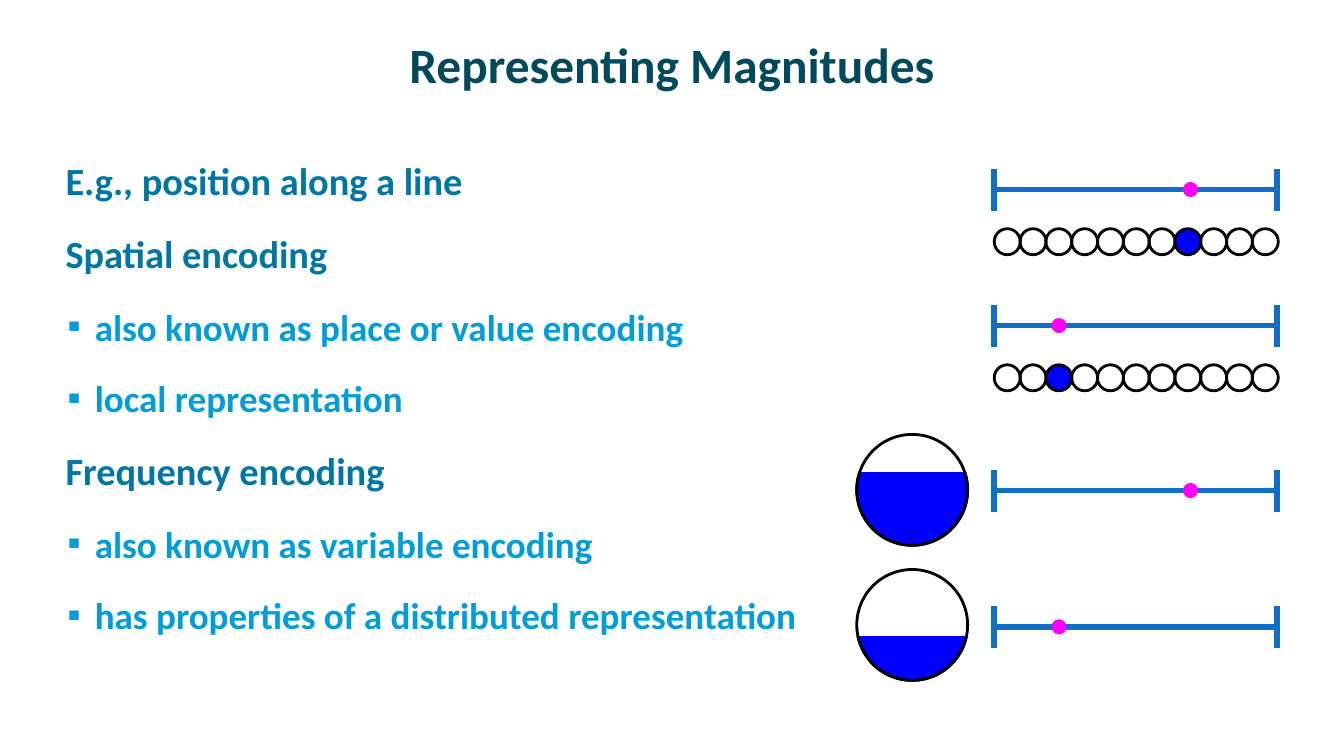
"""Build the slide on spatial and frequency encoding of magnitudes."""
from dataclasses import dataclass
from typing import Optional

from lxml import etree
from pptx import Presentation
from pptx.dml.color import RGBColor
from pptx.enum.shapes import MSO_CONNECTOR, MSO_SHAPE
from pptx.enum.text import MSO_ANCHOR, MSO_AUTO_SIZE, PP_ALIGN
from pptx.oxml.ns import qn
from pptx.util import Pt

OVAL, RECT = MSO_SHAPE.OVAL, MSO_SHAPE.RECTANGLE
STRAIGHT = MSO_CONNECTOR.STRAIGHT
MIDDLE, TOP = MSO_ANCHOR.MIDDLE, MSO_ANCHOR.TOP
CENTER, LEFT = PP_ALIGN.CENTER, PP_ALIGN.LEFT
NO_FIT = MSO_AUTO_SIZE.NONE

NAVY = RGBColor(0x03, 0x49, 0x5C)
TEAL = RGBColor(0x00, 0x76, 0xA3)
SKY = RGBColor(0x00, 0x9D, 0xD9)
AXIS = RGBColor(0x0F, 0x6F, 0xC6)
BLUE = RGBColor(0x00, 0x00, 0xFF)
PINK = RGBColor(0xFF, 0x00, 0xFF)
BLACK = RGBColor(0x00, 0x00, 0x00)
WHITE = RGBColor(0xFF, 0xFF, 0xFF)

FONT = "Calibri"
SCALE_X, SCALE_W, TICK, DOT = 710.2, 202, 15, 8.8
CELLS, CELL, PITCH, DROP = 11, 18.6, 18.43, 28
GAUGE_X, GAUGE, RISE = 612, 79.2, 3


@dataclass
class Item:
    """One line of the list."""
    text: str
    level: int = 0


@dataclass
class Scale:
    """A marked line, with an optional chain of cells below."""
    y: float
    mark: float
    lit: Optional[int] = None


@dataclass
class Gauge:
    """A round gauge filled up to a level."""
    top: float
    level: float


ITEMS = [
    Item("E.g., position along a line"),
    Item("Spatial encoding"),
    Item("also known as place or value encoding", 1),
    Item("local representation", 1),
    Item("Frequency encoding"),
    Item("also known as variable encoding", 1),
    Item("has properties of a distributed representation", 1),
]
SCALES = [Scale(135.4, 140.2, 7), Scale(232.6, 46.3, 2),
          Scale(350.4, 140.2), Scale(447.8, 46.3)]
GAUGES = [Gauge(310.3, 336.2), Gauge(406.8, 453.6)]


def place(holder, x: float, y: float, w: float, h: float, anchor) -> None:
    """Move a placeholder and set its frame."""
    holder.left, holder.top = Pt(x), Pt(y)
    holder.width, holder.height = Pt(w), Pt(h)
    frame = holder.text_frame
    frame.auto_size, frame.word_wrap = NO_FIT, True
    frame.vertical_anchor = anchor
    frame.margin_left = frame.margin_right = Pt(7.9)
    frame.margin_top = frame.margin_bottom = Pt(4.3)


def write(para, text: str, *, size: float, color: RGBColor, align=LEFT,
          before: float = 0, margin: float = 0, indent: float = 0,
          bullet: str = "") -> None:
    """Put formatted text into a paragraph."""
    run = para.add_run()
    run.text = text
    run.font.name, run.font.size, run.font.bold = FONT, Pt(size), True
    run.font.color.rgb = color
    para.alignment, para.space_before = align, Pt(before)
    props = para._p.get_or_add_pPr()
    props.set("marL", str(Pt(margin)))
    props.set("indent", str(Pt(indent)))
    if bullet:
        etree.SubElement(props, qn("a:buFont"), typeface=FONT)
        etree.SubElement(props, qn("a:buChar"), char=bullet)
    else:
        etree.SubElement(props, qn("a:buNone"))


def draw(shapes, kind, x: float, y: float, w: float, h: float,
         line: RGBColor, fill: Optional[RGBColor] = None) -> None:
    """Draw a preset shape, hollow unless a fill is given."""
    shape = shapes.add_shape(kind, Pt(x), Pt(y), Pt(w), Pt(h))
    shape.shadow.inherit = False
    shape.line.color.rgb, shape.line.width = line, Pt(2)
    if fill is None:
        shape.fill.background()
    else:
        shape.fill.solid()
        shape.fill.fore_color.rgb = fill


def rule(shapes, x1: float, y1: float, x2: float, y2: float) -> None:
    """Draw one straight stroke of a scale."""
    line = shapes.add_connector(STRAIGHT, Pt(x1), Pt(y1), Pt(x2), Pt(y2))
    line.line.color.rgb, line.line.width = AXIS, Pt(4)
    etree.SubElement(line._element.spPr, qn("a:effectLst"))


def draw_scale(slide, scale: Scale) -> None:
    """Draw the axis, its end ticks, its dot and its chain."""
    parts = slide.shapes.add_group_shape().shapes
    end = SCALE_X + SCALE_W
    rule(parts, SCALE_X, scale.y, end, scale.y)
    for x in (SCALE_X, end):
        rule(parts, x, scale.y - TICK, x, scale.y + TICK)
    draw(parts, OVAL, SCALE_X + scale.mark - DOT / 2, scale.y - DOT / 2,
         DOT, DOT, PINK, PINK)
    if scale.lit is None:
        return
    chain = slide.shapes.add_group_shape().shapes
    for i in range(CELLS):
        draw(chain, OVAL, SCALE_X + i * PITCH, scale.y + DROP, CELL, CELL,
             BLACK, BLUE if i == scale.lit else None)


def draw_gauge(slide, gauge: Gauge) -> None:
    """Draw the fill, the empty part above it and the rim."""
    parts = slide.shapes.add_group_shape().shapes
    roof = gauge.top - RISE
    draw(parts, OVAL, GAUGE_X, gauge.top, GAUGE, GAUGE, BLACK, BLUE)
    draw(parts, RECT, GAUGE_X, roof, GAUGE, gauge.level - roof, WHITE, WHITE)
    draw(parts, OVAL, GAUGE_X, gauge.top, GAUGE, GAUGE, BLACK)


def main() -> None:
    """Build and save the slide."""
    deck = Presentation()
    deck.slide_width, deck.slide_height = Pt(960), Pt(540)
    slide = deck.slides.add_slide(deck.slide_layouts[1])
    title, body = slide.placeholders
    place(title, 48, 12.2, 864, 66.2, MIDDLE)
    write(title.text_frame.paragraphs[0], "Representing Magnitudes",
          size=35.3, color=NAVY, align=CENTER)
    place(body, 31.7, 108, 880, 374.4, TOP)
    frame = body.text_frame
    for i, item in enumerate(ITEMS):
        para = frame.add_paragraph() if i else frame.paragraphs[0]
        para.level = item.level
        if item.level:
            write(para, item.text, size=26.5, color=SKY, before=19.5,
                  margin=28.1, indent=-19.4, bullet="▪")
        else:
            write(para, item.text, size=27.4, color=TEAL, before=19.5,
                  margin=7.2)
    for gauge in GAUGES:
        draw_gauge(slide, gauge)
    for scale in SCALES:
        draw_scale(slide, scale)
    deck.save("out.pptx")


if __name__ == "__main__":
    main()
